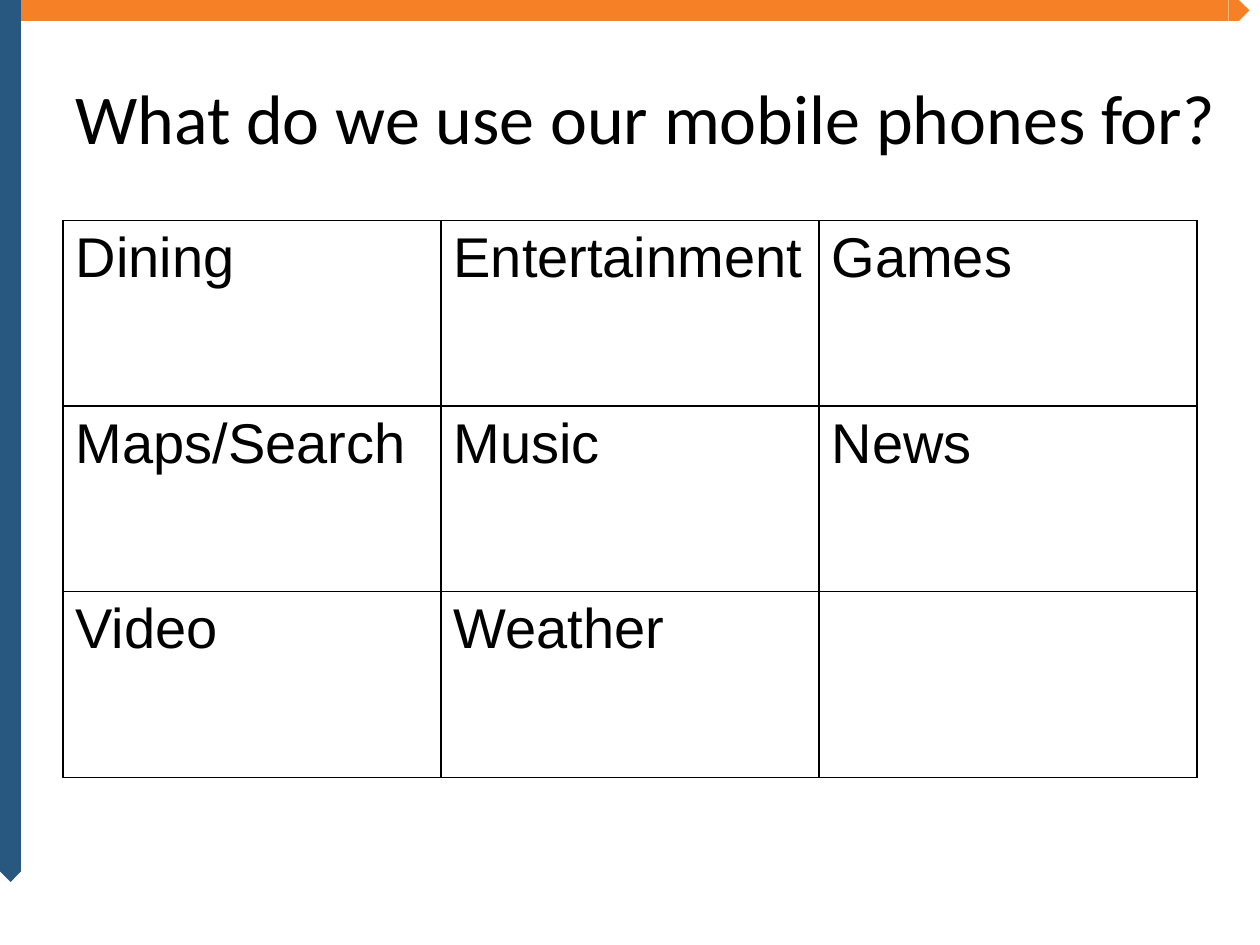
from dataclasses import dataclass

from lxml import etree
from pptx import Presentation
from pptx.dml.color import RGBColor
from pptx.enum.shapes import MSO_SHAPE
from pptx.enum.text import MSO_ANCHOR
from pptx.oxml.ns import qn
from pptx.slide import Slide
from pptx.table import _Cell
from pptx.text.text import _Paragraph
from pptx.util import Pt

RECTANGLE = MSO_SHAPE.RECTANGLE
PENTAGON = MSO_SHAPE.PENTAGON
MIDDLE = MSO_ANCHOR.MIDDLE

ORANGE = RGBColor(0xF5, 0x80, 0x26)
BLUE = RGBColor(0x28, 0x57, 0x80)
BLACK = RGBColor(0x00, 0x00, 0x00)

BAR = 12
TOP_LENGTH = 702
SIDE_LENGTH = 492
COLUMN_WIDTH = 216
ROW_HEIGHT = 106.08
BORDER_SIDES = ("lnL", "lnR", "lnT", "lnB")

TITLE = "What do we use our mobile phones for?"
TITLE_FORMAT = {"name": "Calibri", "size": Pt(40)}
CELL_FORMAT = {"name": "Arial", "size": Pt(32)}
USES = (
    ("Dining", "Entertainment", "Games"),
    ("Maps/Search", "Music", "News"),
    ("Video", "Weather", ""),
)


@dataclass(frozen=True)
class Band:
    kind: MSO_SHAPE
    left: float
    top: float
    width: float
    height: float
    color: RGBColor
    rotation: float = 0


BANDS = (
    Band(PENTAGON, TOP_LENGTH, 0, BAR, BAR, ORANGE),
    Band(PENTAGON, 0, SIDE_LENGTH, BAR, BAR, BLUE, 90),
    Band(RECTANGLE, 0, 0, TOP_LENGTH, BAR, ORANGE),
    Band(RECTANGLE, 0, 0, BAR, SIDE_LENGTH, BLUE),
)


def draw_band(page: Slide, band: Band) -> None:
    shape = page.shapes.add_shape(
        band.kind, Pt(band.left), Pt(band.top), Pt(band.width), Pt(band.height)
    )
    shape.rotation = band.rotation
    shape.shadow.inherit = False
    shape.fill.solid()
    shape.fill.fore_color.rgb = band.color
    shape.line.fill.background()


def write_text(para: _Paragraph, text: str, style: dict) -> None:
    para.text = text
    for name, value in style.items():
        setattr(para.font, name, value)
    para.font.color.rgb = BLACK


def draw_title(page: Slide) -> None:
    box = page.shapes.add_textbox(Pt(36), Pt(21.6), Pt(684), Pt(90))
    frame = box.text_frame
    frame.word_wrap = True
    frame.vertical_anchor = MIDDLE
    write_text(frame.paragraphs[0], TITLE, TITLE_FORMAT)


def add_borders(cell: _Cell) -> None:
    properties = cell._tc.get_or_add_tcPr()
    for side in BORDER_SIDES:
        line = etree.SubElement(properties, qn(f"a:{side}"), w=str(Pt(1)))
        fill = etree.SubElement(line, qn("a:solidFill"))
        etree.SubElement(fill, qn("a:srgbClr"), val=str(BLACK))


def draw_table(page: Slide) -> None:
    rows, columns = len(USES), len(USES[0])
    table = page.shapes.add_table(
        rows, columns, Pt(36), Pt(126),
        Pt(columns * COLUMN_WIDTH), Pt(rows * ROW_HEIGHT),
    ).table
    table.first_row = False
    table.horz_banding = False
    for row, labels in zip(table.rows, USES):
        row.height = Pt(ROW_HEIGHT)
        for cell, label in zip(row.cells, labels):
            add_borders(cell)
            cell.fill.background()
            if label:
                write_text(cell.text_frame.paragraphs[0], label, CELL_FORMAT)


def main() -> None:
    deck = Presentation()
    deck.slide_width, deck.slide_height = Pt(720), Pt(540)
    page = deck.slides.add_slide(deck.slide_layouts[6])
    for band in BANDS:
        draw_band(page, band)
    draw_title(page)
    draw_table(page)
    deck.save("out.pptx")


if __name__ == "__main__":
    main()
